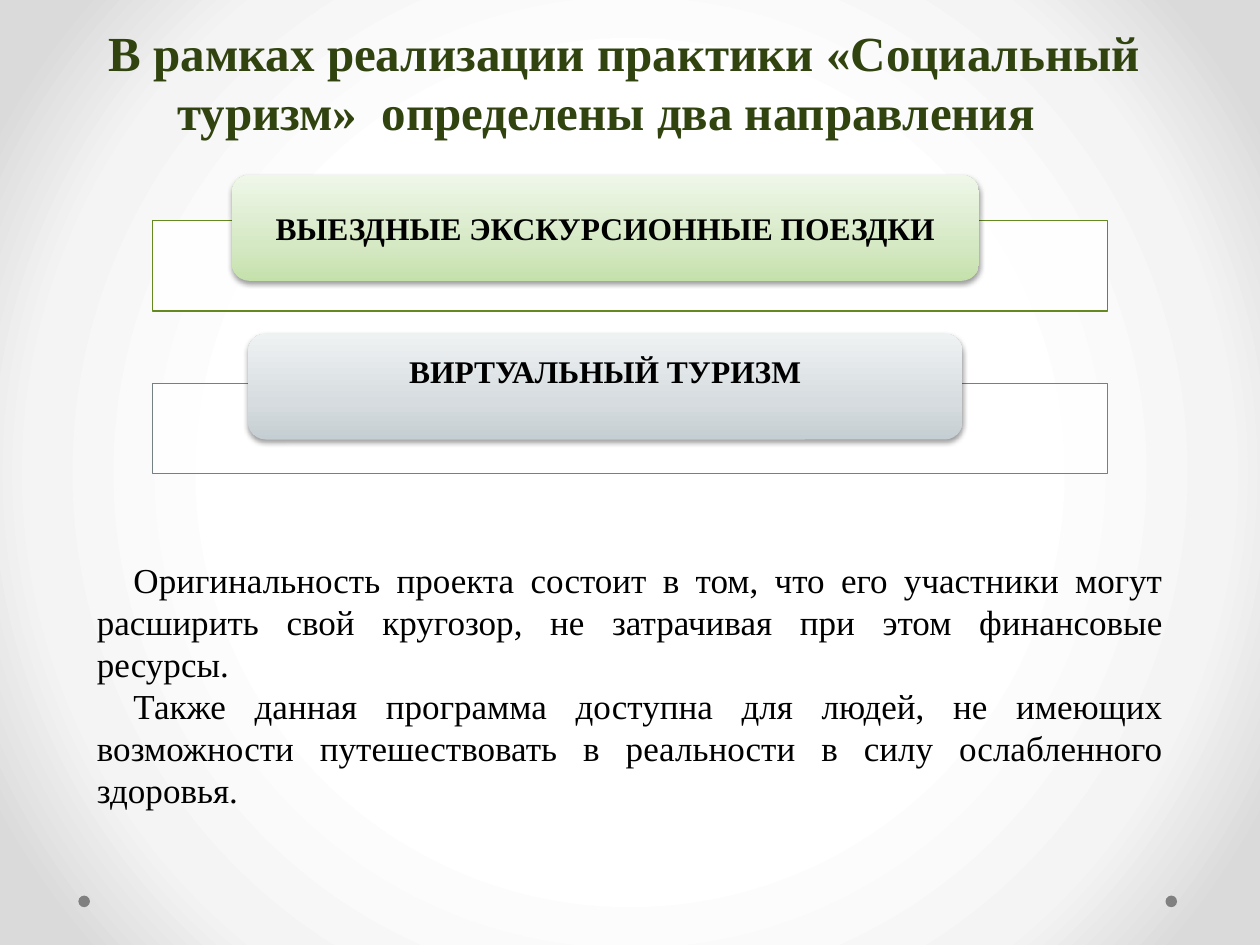
from lxml.etree import SubElement
from pptx import Presentation
from pptx.dml.color import RGBColor
from pptx.enum.shapes import MSO_SHAPE
from pptx.enum.text import MSO_ANCHOR, MSO_AUTO_SIZE, PP_ALIGN
from pptx.oxml import parse_xml
from pptx.oxml.ns import nsdecls, qn
from pptx.util import Pt

BLACK = RGBColor(0, 0, 0)
WHITE = RGBColor(255, 255, 255)
GRAY = RGBColor(0x80, 0x80, 0x80)
DARK = RGBColor(0x31, 0x44, 0x10)
GREEN = RGBColor(0x63, 0x89, 0x1F)
SLATE = RGBColor(0x75, 0x80, 0x85)
GLOW = [(50, WHITE), (76, RGBColor(0xF4, 0xF4, 0xF4)), (92, RGBColor(0xDA, 0xDA, 0xDA))]
LIME = [(0, RGBColor(0xC5, 0xE1, 0xAB)), (35, RGBColor(0xD6, 0xE9, 0xC5)),
        (100, RGBColor(0xEF, 0xF7, 0xE9))]
STEEL = [(0, RGBColor(0xC5, 0xCE, 0xD2)), (35, RGBColor(0xD6, 0xDC, 0xDF)),
         (100, RGBColor(0xEF, 0xF2, 0xF3))]
RADIAL = ('<a:path path="circle"><a:fillToRect l="50000" t="50000" '
          'r="50000" b="50000"/></a:path>')
UPWARD = '<a:lin ang="16200000" scaled="0"/>'
SHADOW = ('<a:effectLst %s><a:outerShdw blurRad="39400" dist="20300" dir="5400000" '
          'rotWithShape="0"><a:srgbClr val="000000"><a:alpha val="38000"/></a:srgbClr>'
          '</a:outerShdw></a:effectLst>' % nsdecls("a"))


def blend(stops, shade):
    """Gradient fill with any number of stops."""
    marks = "".join(f'<a:gs pos="{pos * 1000}"><a:srgbClr val="{tone}"/></a:gs>'
                    for pos, tone in stops)
    return parse_xml(f'<a:gradFill {nsdecls("a")} rotWithShape="1">'
                     f'<a:gsLst>{marks}</a:gsLst>{shade}</a:gradFill>')


def write(shape, lines, frame, para, font, indent=0):
    """Fill a shape with formatted paragraphs."""
    text = shape.text_frame
    text.text = "\n".join(lines)
    for name, value in frame.items():
        setattr(text, name, value)
    for item in text.paragraphs:
        for name, value in para.items():
            setattr(item, name, value)
        props = item._p.get_or_add_pPr()
        props.set("marL", "0")
        props.set("indent", str(Pt(indent)))
        SubElement(props, qn("a:buNone"))
        run = item.runs[0].font
        run.name = "Times New Roman"
        for name, value in font.items():
            if name == "color":
                run.color.rgb = value
            else:
                setattr(run, name, value)


deck = Presentation()
deck.slide_width, deck.slide_height = Pt(720), Pt(540)
slide = deck.slides.add_slide(deck.slide_layouts[1])
shapes = slide.shapes

# Background glow
slide.background.fill.solid()
back = slide.element.find(".//" + qn("p:bgPr"))
back.replace(back[0], blend(GLOW, RADIAL))

# Corner dots
for left in (44.8, 666):
    dot = shapes.add_shape(MSO_SHAPE.OVAL, Pt(left), Pt(511.8), Pt(6.6), Pt(6.6))
    dot.shadow.inherit = False
    dot.fill.solid()
    dot.fill.fore_color.rgb = GRAY
    dot.line.fill.background()

# Title and body
top = {"word_wrap": True, "auto_size": MSO_AUTO_SIZE.NONE,
       "vertical_anchor": MSO_ANCHOR.TOP}
title, body = shapes.title, slide.placeholders[1]
for holder, box in ((title, (20, 9.4, 652.4, 75)), (body, (48.2, 315.4, 623.6, 177))):
    holder.left, holder.top, holder.width, holder.height = map(Pt, box)
write(title, ["В рамках реализации практики «Социальный туризм»  определены два направления"],
      top, {"alignment": PP_ALIGN.CENTER, "space_before": Pt(0)},
      {"size": Pt(28), "bold": True, "color": DARK}, 20.9)
write(body, ["Оригинальность проекта состоит в том, что его участники могут расширить "
             "свой кругозор, не затрачивая при этом финансовые ресурсы.",
             "Также данная программа доступна для людей, не имеющих возможности "
             "путешествовать в реальности в силу ослабленного здоровья."],
      top, {"alignment": PP_ALIGN.JUSTIFY, "space_before": Pt(0)},
      {"size": Pt(20), "color": BLACK}, 20.9)

# Two directions: an outlined bar with a card over it
rows = [("ВЫЕЗДНЫЕ ЭКСКУРСИОННЫЕ ПОЕЗДКИ", 126, 100, 132.5, 427, GREEN, LIME, 0),
        ("ВИРТУАЛЬНЫЙ ТУРИЗМ", 219, 190.7, 141.8, 408.2, SLATE, STEEL, 18)]
for label, low, high, left, width, edge, stops, foot in rows:
    bar = shapes.add_shape(MSO_SHAPE.RECTANGLE, Pt(87), Pt(low), Pt(546), Pt(51.8))
    bar.shadow.inherit = False
    bar.fill.solid()
    bar.fill.fore_color.rgb = WHITE
    tone = bar._element.spPr.find(".//" + qn("a:srgbClr"))
    SubElement(tone, qn("a:alpha")).set("val", "90000")
    bar.line.color.rgb = edge
    bar.line.width = Pt(0.75)

    card = shapes.add_shape(MSO_SHAPE.ROUNDED_RECTANGLE,
                            Pt(left), Pt(high), Pt(width), Pt(60.5))
    card.fill.solid()
    card.line.fill.background()
    props = card._element.spPr
    props.replace(props.find(qn("a:solidFill")), blend(stops, UPWARD))
    props.append(parse_xml(SHADOW))
    write(card, [label],
          {"word_wrap": True, "vertical_anchor": MSO_ANCHOR.MIDDLE,
           "margin_left": Pt(17), "margin_right": Pt(17),
           "margin_top": Pt(0), "margin_bottom": Pt(foot)},
          {"alignment": PP_ALIGN.CENTER},
          {"size": Pt(18), "bold": True, "color": BLACK})

deck.save("out.pptx")
